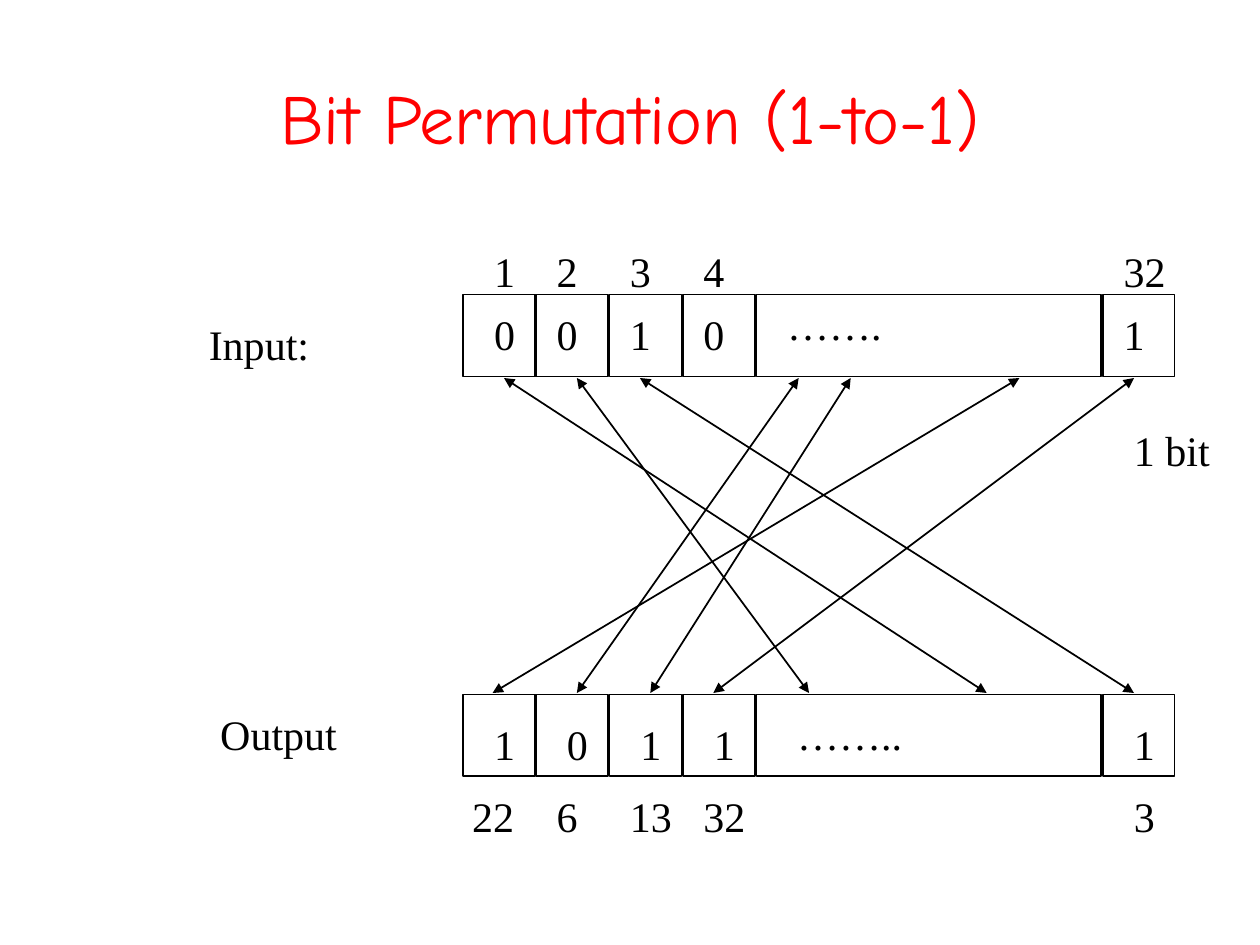
import pptx
import pptx.util
import pptx.dml.color
import pptx.enum.shapes
import pptx.enum.text
import pptx.oxml.ns
from dataclasses import dataclass
from lxml import etree
from pptx.util import Cm, Pt


@dataclass(frozen=True)
class Theme:
    ink: str = "000000"
    accent: str = "FF0000"
    title_font: str = "Comic Neue"
    body_font: str = "Times New Roman"
    title_size: int = 40
    body_size: int = 24
    line: float = 1


T = Theme()
PITCH, CELL_W, WIDE_W, GAP = 1.48, 1.45, 6.95, 0.03  # register cells, cm
BAR_H, TEXT_H, INSET = 1.65, 1.27, 0.25
BODY = {"name": T.body_font, "size": Pt(T.body_size)}
TITLE = {"name": T.title_font, "size": Pt(T.title_size)}


def rgb(value):
    return pptx.dml.color.RGBColor.from_string(value)


def child(parent, tag, **attrs):
    return etree.SubElement(parent, pptx.oxml.ns.qn(tag), attrs)


def add_text(s, box, text, fmt=BODY, color=T.ink, wrap=False):
    sp = s.shapes.add_textbox(*[Cm(v) for v in box])
    tf = sp.text_frame
    tf.word_wrap = wrap
    p = tf.paragraphs[0]
    r = p.add_run()
    r.text = text
    for key, value in fmt.items():
        setattr(r.font, key, value)
    r.font.color.rgb = rgb(color)
    return tf, p


def add_title(s, box, text):
    tf, p = add_text(s, box, text, TITLE, T.accent, wrap=True)
    tf.vertical_anchor = pptx.enum.text.MSO_ANCHOR.MIDDLE
    layout = {"alignment": pptx.enum.text.PP_ALIGN.CENTER,
              "space_before": Pt(12), "space_after": Pt(3)}
    for key, value in layout.items():
        setattr(p, key, value)


def add_row(s, box, labels, first, second, last):
    """One line of labels on tab stops; offsets are from the register's left."""
    x, y, dx, dy = box
    offsets = [first] + [second + i * PITCH for i in range(len(labels) - 2)] + [last]
    stops = [o - dx - INSET for o in offsets]
    lead = "\t" if stops[0] > 0.05 else ""
    _, p = add_text(s, (x + dx, y + dy, 14.8, TEXT_H),
                    lead + "\t".join(labels), wrap=True)
    tabs = child(p._p.get_or_add_pPr(), "a:tabLst")
    for stop in stops if lead else stops[1:]:
        child(tabs, "a:tab", pos=str(Cm(stop)), algn="l")


def add_register(s, x, y, caption, dots, rows):
    # Cells: four single bits, the elided middle, the last bit
    widths = [CELL_W] * 4 + [WIDE_W, CELL_W]
    left = x
    for w in widths:
        sp = s.shapes.add_shape(pptx.enum.shapes.MSO_SHAPE.RECTANGLE,
                                Cm(left), Cm(y), Cm(w), Cm(BAR_H))
        sp.shadow.inherit = False
        sp.fill.background()
        sp.line.color.rgb = rgb(T.ink)
        sp.line.width = Pt(T.line)
        left += w + GAP
    # Caption and ellipsis
    for text, dx, dy, w in (caption, dots):
        add_text(s, (x + dx, y + dy, w, TEXT_H), text)
    # Bit values and bit numbers
    for labels, dx, dy, first, second, last in rows:
        add_row(s, (x, y, dx, dy), labels.split(), first, second, last)


def add_arrows(s, box, pairs):
    x, top, bottom = box
    for a, b in pairs:
        c = s.shapes.add_connector(pptx.enum.shapes.MSO_CONNECTOR.STRAIGHT,
                                   Cm(x + a), Cm(top), Cm(x + b), Cm(bottom))
        c.line.color.rgb = rgb(T.ink)
        c.line.width = Pt(T.line)
        ln = c.line._get_or_add_ln()
        for end in ("a:headEnd", "a:tailEnd"):
            child(ln, end, type="triangle")
        child(c._element.spPr, "a:effectLst")


def main():
    prs = pptx.Presentation()
    prs.slide_width, prs.slide_height = Cm(25.4), Cm(19.05)
    s = prs.slides.add_slide(prs.slide_layouts[6])

    add_title(s, (1.27, 0.76, 22.86, 3.18), "Bit Permutation (1-to-1)")

    # Input and output registers
    x = 9.33
    add_register(s, x, 5.94, ("Input:", -5.37, 0.36, 2.54),
                 ("…….", 6.29, -0.05, 2.41),
                 [("1 2 3 4 32", -0.06, -1.11, 0.63, 1.89, 13.32),
                  ("0 0 1 0 1", 0.14, 0.16, 0.63, 1.89, 13.32)])
    add_register(s, x, 14, ("Output", -5.14, 0.15, 2.87),
                 ("……..", 6.49, 0.15, 2.62),
                 [("1 0 1 1 1", 0.14, 0.35, 0.63, 2.1, 13.53),
                  ("22 6 13 32 3", -0.06, 1.82, 0.2, 1.89, 13.53)])

    # Permutation: input offset to output offset
    add_arrows(s, (x, 7.62, 13.97),
               [(3.57, 13.53), (13.53, 5.05), (6.77, 2.3), (11.22, 0.6),
                (7.82, 3.78), (0.83, 10.56), (2.3, 6.98)])

    add_text(s, (22.61, 8.43, 2.06, TEXT_H), "1 bit")
    prs.save("out.pptx")


if __name__ == "__main__":
    main()
